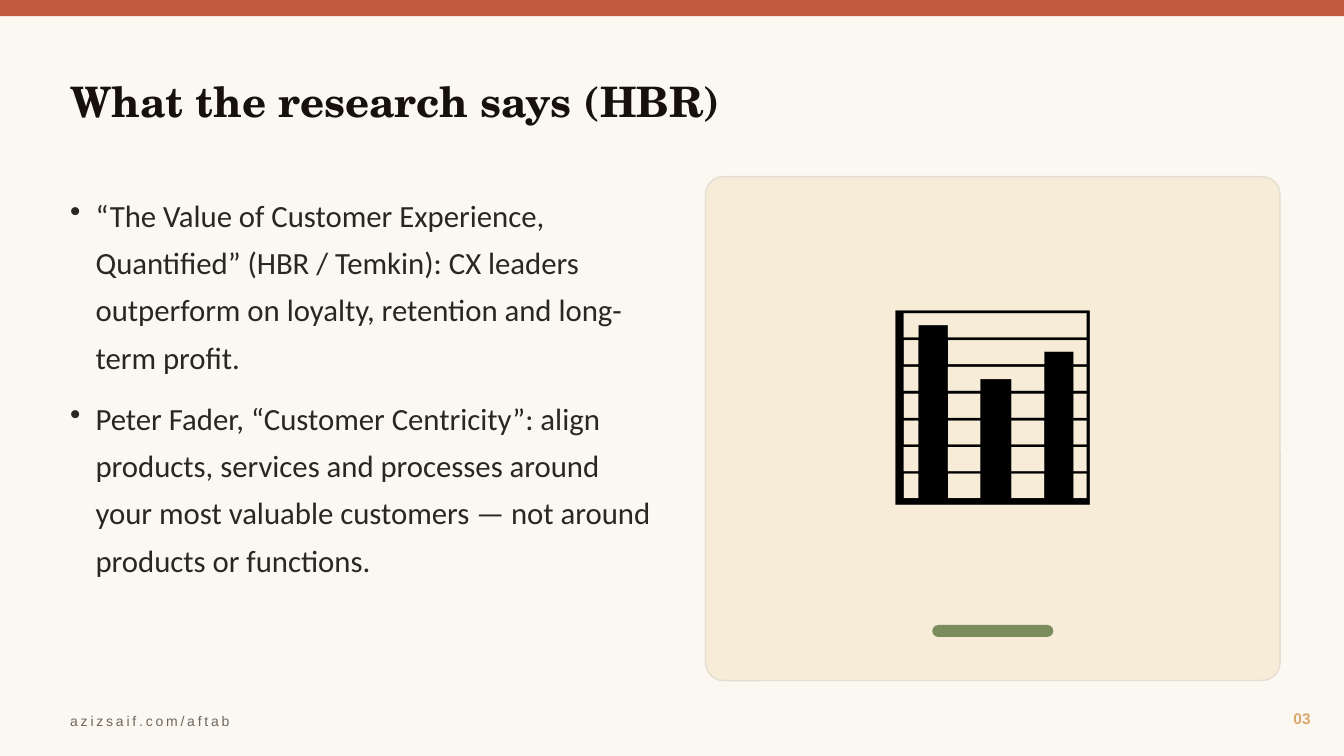
import pptx
import pptx.util
import pptx.dml.color
import pptx.enum.shapes
import pptx.enum.text
import pptx.oxml.ns
import lxml.etree

Cm = pptx.util.Cm
Pt = pptx.util.Pt
KIND = pptx.enum.shapes.MSO_SHAPE
ALIGN = pptx.enum.text.PP_ALIGN
ANCHOR = pptx.enum.text.MSO_ANCHOR

WIDE, HIGH = 33.87, 19.05
EDGE = 1.52
HUES = {
    "page": "FBF7F1", "band": "C45A3D", "title": "16110D", "card": "F6ECD8",
    "rim": "E4DDD0", "icon": "000000", "dash": "7A8C5C", "body": "2A2622",
    "count": "D9A86C", "site": "6E665C",
}
FONTS = {
    "title": {"name": "TeX Gyre Schola", "size": Pt(30), "bold": True},
    "icon": {"name": "Calibri", "size": Pt(150)},
    "body": {"name": "Calibri", "size": Pt(22)},
    "count": {"name": "Arial", "size": Pt(11), "bold": True},
    "site": {"name": "Arial", "size": Pt(10)},
}
POINTS = [
    "“The Value of Customer Experience, Quantified” (HBR / Temkin): CX leaders "
    "outperform on loyalty, retention and long-term profit.",
    "Peter Fader, “Customer Centricity”: align products, services and processes "
    "around your most valuable customers — not around products or functions.",
]


def hue(name):
    return pptx.dml.color.RGBColor.from_string(HUES[name])


def fill(item, name):
    item.fill.solid()
    item.fill.fore_color.rgb = hue(name)


def block(slide, box, role, kind=KIND.RECTANGLE, round_by=None, rim=None):
    """Draw a filled shape, with a thin outline if rim names a colour."""
    shape = slide.shapes.add_shape(kind, *map(Cm, box))
    shape.shadow.inherit = False
    fill(shape, role)
    if round_by is not None:
        shape.adjustments[0] = round_by
    if rim:
        shape.line.color.rgb = hue(rim)
        shape.line.width = Pt(1)
    else:
        shape.line.fill.background()


def write(slide, box, role, lines, align=ALIGN.LEFT, anchor=ANCHOR.MIDDLE):
    """Put one paragraph per line in a text box and return the paragraphs."""
    frame = slide.shapes.add_textbox(*map(Cm, box)).text_frame
    frame.word_wrap = True
    frame.vertical_anchor = anchor
    for i, line in enumerate(lines):
        para = frame.add_paragraph() if i else frame.paragraphs[0]
        para.alignment = align
        run = para.add_run()
        run.text = line
        for key, value in FONTS[role].items():
            setattr(run.font, key, value)
        run.font.color.rgb = hue(role)
    return frame.paragraphs


def header(slide, box):
    left, top, width, height = box
    block(slide, (left, top, width, 0.41), "band")
    write(slide, (left + EDGE, top + 1.27, 30.73, 2.54), "title",
          ["What the research says (HBR)"])


def card(slide, box):
    left, top, width, height = box
    block(slide, box, "card", KIND.ROUNDED_RECTANGLE, 0.036, "rim")
    write(slide, (left, top, width, 10.41), "icon", ["📊"], ALIGN.CENTER)
    dash = 3.05
    block(slide, (left + (width - dash) / 2, top + 11.3, dash, 0.3),
          "dash", KIND.ROUNDED_RECTANGLE, 0.5)


def bullets(slide, box):
    indent = Cm(0.64)
    for para in write(slide, box, "body", POINTS, anchor=ANCHOR.TOP):
        para.line_spacing = 1.28
        para.space_after = Pt(10)
        props = para._p.get_or_add_pPr()
        props.set("marL", str(indent))
        props.set("indent", str(-indent))
        mark = lxml.etree.SubElement(props, pptx.oxml.ns.qn("a:buChar"))
        mark.set("char", "•")


def footer(slide, box):
    left, top, width, height = box
    write(slide, (left + width - 2.88, top, 2.29, 0.89), "count", ["03"], ALIGN.RIGHT)
    site = write(slide, (left + EDGE, top + 0.13, 20.32, 0.76), "site",
                 ["azizsaif.com/aftab"])
    site[0].runs[0].font._element.set("spc", "200")


def main():
    deck = pptx.Presentation()
    deck.slide_width, deck.slide_height = Cm(WIDE), Cm(HIGH)
    slide = deck.slides.add_slide(deck.slide_layouts[6])
    fill(slide.background, "page")
    header(slide, (0, 0, WIDE, 3.81))
    card(slide, (17.78, 4.45, 14.48, 12.7))
    bullets(slide, (EDGE, 4.57, 15.24, 12.7))
    footer(slide, (0, 17.65, WIDE, 0.89))
    deck.save("out.pptx")


if __name__ == "__main__":
    main()
